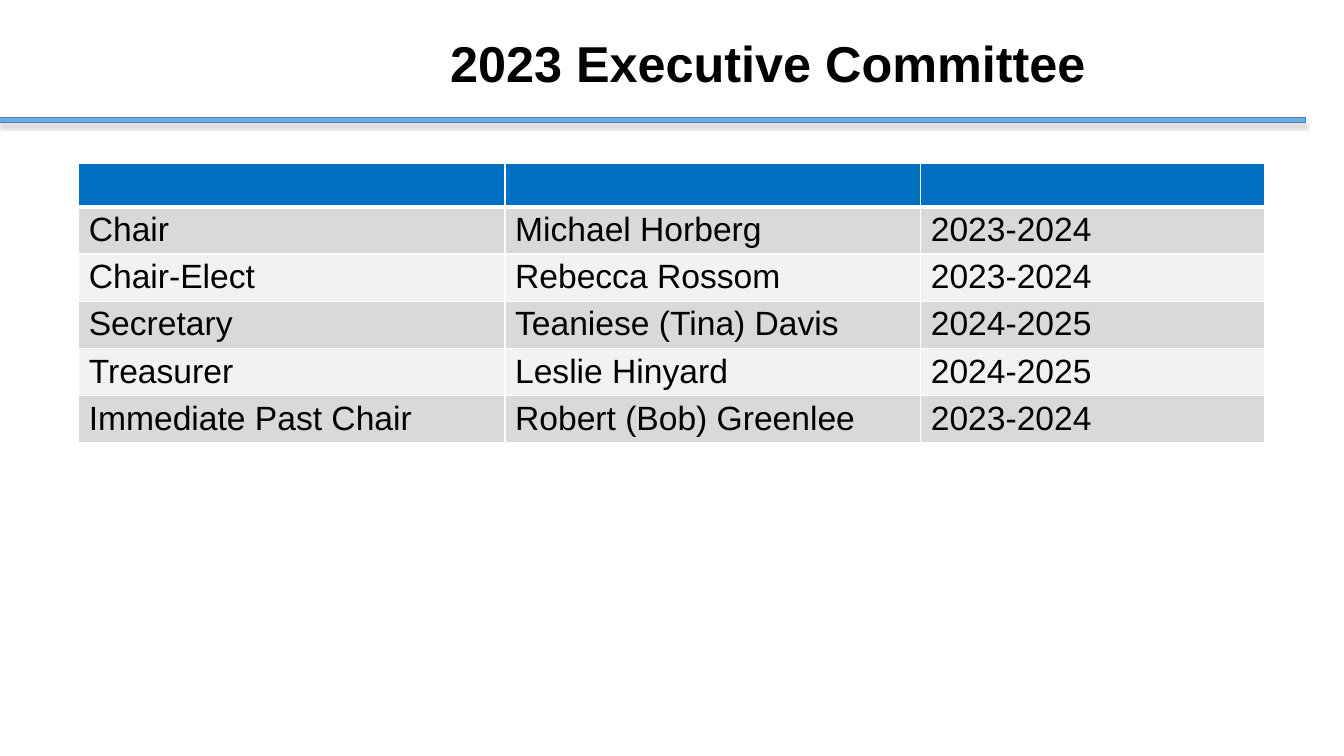
from typing import NamedTuple

from lxml import etree
from pptx import Presentation
from pptx.dml.color import RGBColor
from pptx.enum.shapes import MSO_SHAPE
from pptx.enum.text import MSO_ANCHOR, PP_ALIGN
from pptx.oxml import parse_xml
from pptx.oxml.ns import nsdecls, qn
from pptx.util import Emu, Pt

EMU_PER_PX = 9525
COLORS = {
    "header": "0070C0",
    "odd_row": "D9D9D9",
    "even_row": "F2F2F2",
    "grid": "FFFFFF",
    "text": "000000",
    "rule": "6BAFE0",
    "rule_edge": "4A7EBB",
    "rule_shadow": "808080",
}
TITLE_FONT = {"name": "Arial", "size": Pt(36), "bold": True}
BODY_FONT = {"name": "Arial", "size": Pt(24), "bold": False}
COLUMN_WIDTHS = (406, 396, 327)
HEADER_HEIGHT, ROW_HEIGHT = 41, 45


class Box(NamedTuple):
    left: int
    top: int
    width: int
    height: int


class Officer(NamedTuple):
    role: str
    person: str
    term: str


OFFICERS = (
    Officer("Chair", "Michael Horberg", "2023-2024"),
    Officer("Chair-Elect", "Rebecca Rossom", "2023-2024"),
    Officer("Secretary", "Teaniese (Tina) Davis", "2024-2025"),
    Officer("Treasurer", "Leslie Hinyard", "2024-2025"),
    Officer("Immediate Past Chair", "Robert (Bob) Greenlee", "2023-2024"),
)


def px(length: int) -> Emu:
    return Emu(length * EMU_PER_PX)


def color(key: str) -> RGBColor:
    return RGBColor.from_string(COLORS[key])


def place(box: Box) -> list[Emu]:
    return [px(length) for length in box]


def format_font(font, values: dict) -> None:
    for attribute, value in values.items():
        setattr(font, attribute, value)
    font.color.rgb = color("text")


def draw_title(slide, text: str, box: Box) -> None:
    title = slide.shapes.title
    title.left, title.top, title.width, title.height = place(box)
    frame = title.text_frame
    frame.text = text
    frame.vertical_anchor = MSO_ANCHOR.MIDDLE
    frame.paragraphs[0].alignment = PP_ALIGN.LEFT
    format_font(frame.paragraphs[0].runs[0].font, TITLE_FONT)


def draw_rule(slide, box: Box) -> None:
    rule = slide.shapes.add_shape(MSO_SHAPE.RECTANGLE, *place(box))
    rule.fill.solid()
    rule.fill.fore_color.rgb = color("rule")
    rule.line.color.rgb = color("rule_edge")
    rule.line.width = Pt(0.75)
    rule.shadow.inherit = False
    effects = rule._element.spPr.find(qn("a:effectLst"))
    effects.append(parse_xml(
        f'<a:outerShdw {nsdecls("a")} blurRad="{Pt(3.1)}" dist="{Pt(1.8)}" '
        f'dir="5400000" rotWithShape="0"><a:srgbClr val="{COLORS["rule_shadow"]}">'
        '<a:alpha val="35000"/></a:srgbClr></a:outerShdw>'
    ))


def set_borders(cell, top: int, bottom: int) -> None:
    properties = cell._tc.get_or_add_tcPr()
    widths = {"lnL": 1, "lnR": 1, "lnT": top, "lnB": bottom}
    for position, (side, width) in enumerate(widths.items()):
        border = etree.Element(qn(f"a:{side}"), w=str(Pt(width)))
        fill = etree.SubElement(border, qn("a:solidFill"))
        etree.SubElement(fill, qn("a:srgbClr"), val=COLORS["grid"])
        properties.insert(position, border)


def draw_officers(slide, left: int, top: int) -> None:
    height = HEADER_HEIGHT + ROW_HEIGHT * len(OFFICERS)
    box = Box(left, top, sum(COLUMN_WIDTHS), height)
    committee = slide.shapes.add_table(
        len(OFFICERS) + 1, len(COLUMN_WIDTHS), *place(box)
    ).table
    for column, width in zip(committee.columns, COLUMN_WIDTHS):
        column.width = px(width)
    for index, row in enumerate(committee.rows):
        row.height = px(ROW_HEIGHT if index else HEADER_HEIGHT)
        fill_key = ("odd_row" if index % 2 else "even_row") if index else "header"
        for column_index, cell in enumerate(row.cells):
            cell.fill.solid()
            cell.fill.fore_color.rgb = color(fill_key)
            cell.margin_top = cell.margin_bottom = px(4)
            set_borders(cell, 3 if index == 1 else 1, 1 if index else 3)
            if index:
                cell.text = OFFICERS[index - 1][column_index]
                format_font(cell.text_frame.paragraphs[0].runs[0].font, BODY_FONT)


def main() -> None:
    presentation = Presentation()
    presentation.slide_width, presentation.slide_height = px(1280), px(720)
    slide = presentation.slides.add_slide(presentation.slide_layouts[5])
    draw_rule(slide, Box(0, 112, 1243, 5))
    draw_title(slide, "2023 Executive Committee", Box(419, 3, 847, 112))
    draw_officers(slide, 75, 156)
    presentation.save("out.pptx")


if __name__ == "__main__":
    main()
